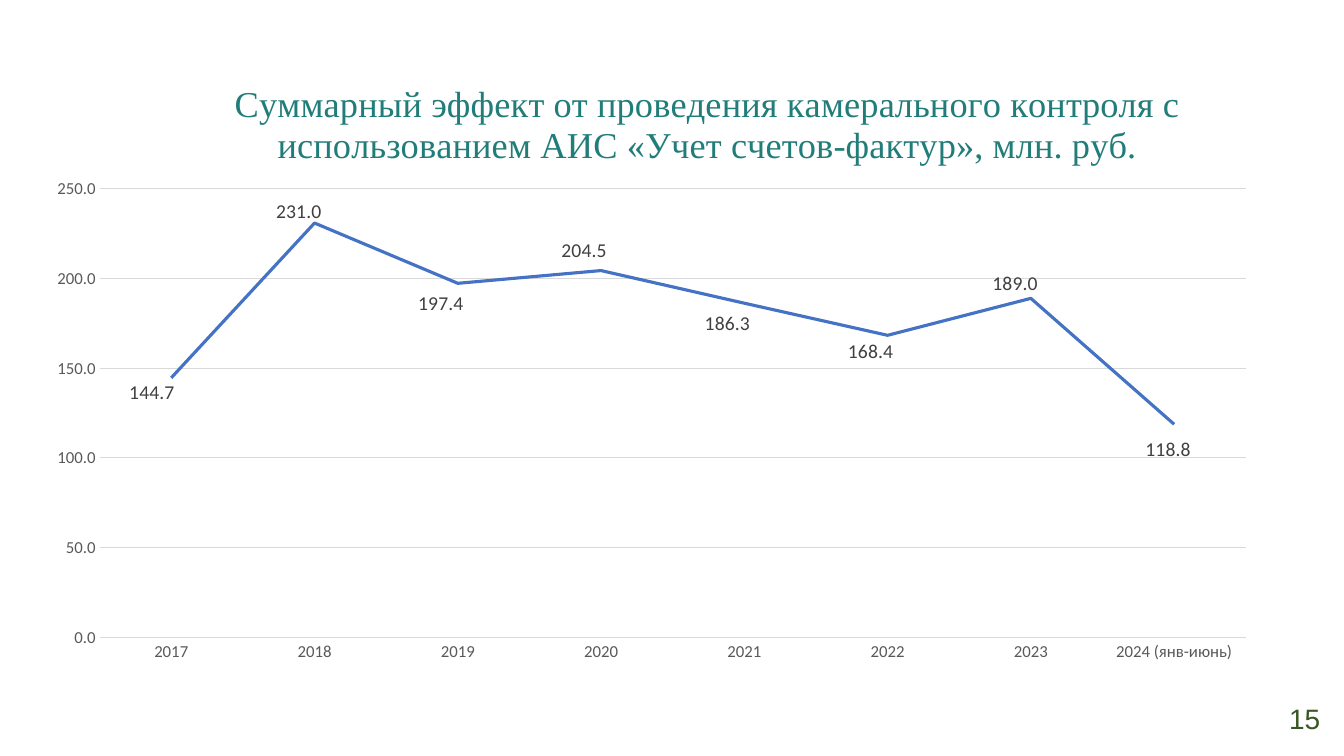
from lxml import etree
from pptx import Presentation
from pptx.chart.data import CategoryChartData as ChartData
from pptx.dml.color import RGBColor as RGB
from pptx.enum.chart import XL_CHART_TYPE as Kind
from pptx.enum.chart import XL_LABEL_POSITION as Spot
from pptx.enum.chart import XL_TICK_MARK as Tick
from pptx.enum.text import MSO_ANCHOR as Anchor
from pptx.enum.text import PP_ALIGN as Align
from pptx.oxml.ns import qn
from pptx.util import Pt

COLORS = {
    "title": "217D79",
    "axis": "595959",
    "grid": "D9D9D9",
    "line": "4472C4",
    "label": "404040",
    "number": "385723",
}
TITLE = ("Суммарный эффект от проведения камерального контроля с "
         "использованием АИС «Учет счетов-фактур», млн. руб.")
# Year, value, and label shift as a share of the chart's width and height
EFFECT = [
    ("2017", 144.7, -0.016, 0.023),
    ("2018", 231.0, -0.013, -0.017),
    ("2019", 197.4, -0.014, 0.032),
    ("2020", 204.5, -0.014, -0.031),
    ("2021", 186.3, -0.014, 0.032),
    ("2022", 168.4, -0.014, 0.025),
    ("2023", 189.0, -0.013, -0.023),
    ("2024 (янв-июнь)", 118.8, -0.005, 0.039),
]


def set_font(font, name, size, color):
    font.name = name
    font.size = Pt(size)
    font.bold = False
    font.color.rgb = RGB.from_string(COLORS[color])


def set_line(line, color, width):
    line.color.rgb = RGB.from_string(COLORS[color])
    line.width = Pt(width)


def place(host, index, **rules):
    """Give a chart part a manual layout, as its child at index."""
    for old in host.findall(qn("c:layout")):
        host.remove(old)
    layout = etree.Element(qn("c:layout"))
    manual = etree.SubElement(layout, qn("c:manualLayout"))
    for key, value in rules.items():
        etree.SubElement(manual, qn("c:" + key)).set("val", str(value))
    host.insert(index, layout)


def add_title(chart):
    chart.has_title = True
    para = chart.chart_title.text_frame.paragraphs[0]
    para.alignment = Align.CENTER
    run = para.add_run()
    run.text = TITLE
    set_font(run.font, "Times New Roman", 26, "title")
    place(chart.element.find(".//" + qn("c:title")), 1,
          xMode="edge", yMode="edge", x=0.14, y=0.03)


def style_axes(chart):
    years, sums = chart.category_axis, chart.value_axis
    for axis in (years, sums):
        axis.major_tick_mark = axis.minor_tick_mark = Tick.NONE
        set_font(axis.tick_labels.font, "Calibri", 12, "axis")
    set_line(years.format.line, "grid", 0.75)
    sums.format.line.fill.background()
    sums.has_major_gridlines = True
    set_line(sums.major_gridlines.format.line, "grid", 0.75)
    sums.minimum_scale, sums.maximum_scale, sums.major_unit = 0, 250, 50
    sums.tick_labels.number_format = "0.0"
    sums.tick_labels.number_format_is_linked = False


def add_labels(chart, series):
    labels = series.data_labels
    labels.show_value = True
    labels.number_format = "0.0"
    labels.number_format_is_linked = False
    labels.position = Spot.CENTER
    set_font(labels.font, "Calibri", 14, "label")
    for i in range(len(EFFECT)):
        label = series.points[i].data_label
        set_font(label.font, "Calibri", 14, "label")
        label.position = Spot.CENTER
    parts = chart.element.findall(".//" + qn("c:dLbl"))
    for part, (_, _, dx, dy) in zip(parts, EFFECT):
        place(part, 1, x=dx, y=dy)


def add_chart(slide):
    data = ChartData(number_format="0.0")
    data.categories = [row[0] for row in EFFECT]
    data.add_series("Series 1", [row[1] for row in EFFECT])
    chart = slide.shapes.add_chart(Kind.LINE_STACKED, Pt(41), Pt(38.9),
                                   Pt(866.2), Pt(462.2), data).chart
    chart.has_legend = False
    chart.font.name = "Calibri"
    chart.font.size = Pt(10)
    plot = chart.plots[0]
    plot.vary_by_categories = False
    series = plot.series[0]
    series.smooth = False
    set_line(series.format.line, "line", 2.25)
    add_title(chart)
    style_axes(chart)
    add_labels(chart, series)
    place(chart.element.find(".//" + qn("c:plotArea")), 0,
          layoutTarget="inner", xMode="edge", yMode="edge",
          x=0.034, y=0.208, w=0.946, h=0.693)


def add_number(slide):
    box = slide.shapes.add_textbox(Pt(913.7), Pt(500.4), Pt(41.8), Pt(28))
    frame = box.text_frame
    frame.word_wrap = True
    frame.vertical_anchor = Anchor.MIDDLE
    para = frame.paragraphs[0]
    para.line_spacing = 0.9
    run = para.add_run()
    run.text = "15"
    set_font(run.font, "Arial", 20, "number")


def main():
    deck = Presentation()
    deck.slide_width, deck.slide_height = Pt(960), Pt(540)
    slide = deck.slides.add_slide(deck.slide_layouts[6])
    add_chart(slide)
    add_number(slide)
    deck.save("out.pptx")


if __name__ == "__main__":
    main()
